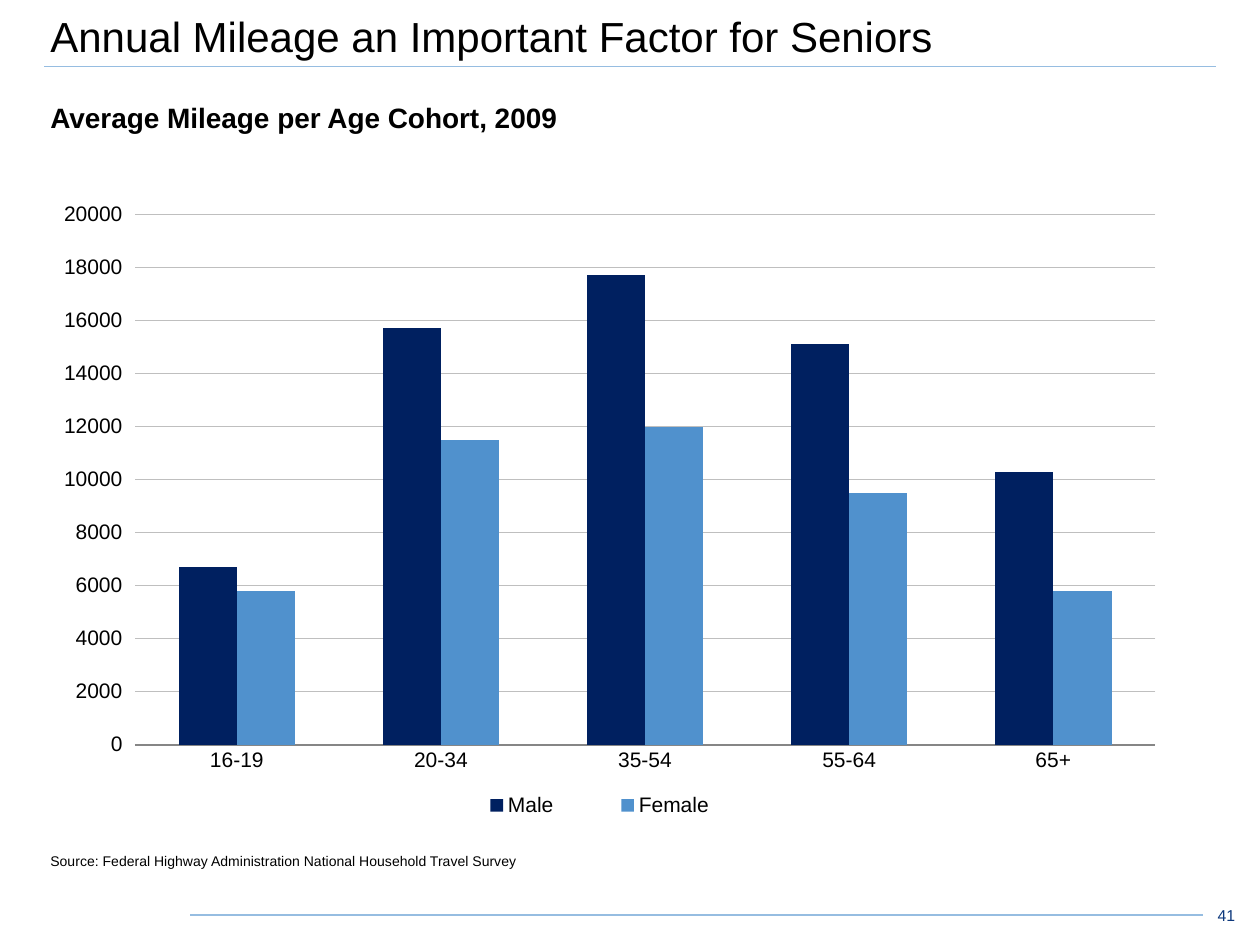
from dataclasses import dataclass

from lxml.etree import SubElement
from pptx import Presentation
from pptx.chart.data import CategoryChartData
from pptx.dml.color import RGBColor
from pptx.enum.chart import XL_CHART_TYPE, XL_LEGEND_POSITION, XL_TICK_MARK
from pptx.enum.shapes import MSO_CONNECTOR
from pptx.enum.text import MSO_ANCHOR, PP_ALIGN
from pptx.oxml.ns import qn
from pptx.util import Inches, Pt


@dataclass(frozen=True)
class Theme:
    font: str = "Arial"
    text: str = "000000"
    number: str = "0D387C"
    rule: str = "96BDE1"
    grid: str = "BFBFBF"
    axis: str = "868686"
    title_size: int = 24
    heading_size: int = 16
    chart_size: int = 12
    number_size: int = 9
    source_size: int = 8


THEME = Theme()

# Content: text boxes as (text, area, inset, anchor, alignment, size, colour, bold)
TEXTS = [
    ("Source: Federal Highway Administration National Household Travel Survey",
     (0.35, 6.24, 9.3, 0.71), 0.05, MSO_ANCHOR.BOTTOM, PP_ALIGN.LEFT,
     THEME.source_size, THEME.text, False),
    ("Annual Mileage an Important Factor for Seniors",
     (0.35, 0, 9.3, 0.53), 0.05, MSO_ANCHOR.BOTTOM, PP_ALIGN.LEFT,
     THEME.title_size, THEME.text, False),
    ("Average Mileage per Age Cohort, 2009",
     (0.35, 0.75, 9.3, 0.5), 0.05, MSO_ANCHOR.TOP, PP_ALIGN.LEFT,
     THEME.heading_size, THEME.text, True),
    ("41", (9.55, 7.1, 0.35, 0.32), 0.1, MSO_ANCHOR.MIDDLE, PP_ALIGN.RIGHT,
     THEME.number_size, THEME.number, False),
]
# Rules as (left, right, height on page, width in points)
RULES = [(0.35, 9.65, 0.53, 0.5), (1.51, 9.55, 7.26, 1)]

AGES = ["16-19", "20-34", "35-54", "55-64", "65+"]
MILEAGE = [
    ("Male", "002060", [6700, 15700, 17700, 15100, 10300]),
    ("Female", "5091CD", [5800, 11500, 12000, 9500, 5800]),
]
CHART_AREA = (0.35, 1.5, 9, 5.07)
# Shares of the chart area: x, y, width, height
PLOT_LAYOUT = (0.08, 0.04, 0.9, 0.83)
LEGEND_LAYOUT = (0.34, 0.93, 0.3, 0.07)


def style_font(font, size, color, bold=False):
    font.name = THEME.font
    font.size = Pt(size)
    font.bold = bold
    font.color.rgb = RGBColor.from_string(color)


def style_line(line, color, width):
    line.color.rgb = RGBColor.from_string(color)
    line.width = Pt(width)


def add_rule(page, left, right, top, width):
    rule = page.shapes.add_connector(
        MSO_CONNECTOR.STRAIGHT, Inches(left), Inches(top), Inches(right), Inches(top))
    style_line(rule.line, THEME.rule, width)
    SubElement(rule._element.spPr, qn("a:effectLst"))


def add_text(page, text, area, inset, anchor, alignment, size, color, bold):
    box = page.shapes.add_textbox(*map(Inches, area))
    frame = box.text_frame
    frame.word_wrap = True
    frame.vertical_anchor = anchor
    frame.margin_left = frame.margin_right = Inches(inset)
    frame.margin_top = frame.margin_bottom = Inches(0.05)
    paragraph = frame.paragraphs[0]
    paragraph.text = text
    paragraph.alignment = alignment
    style_font(paragraph.font, size, color, bold)


def set_layout(element, shares, inner=False):
    """Place a plot area or legend by shares of the chart area."""
    layout = element.find(qn("c:layout"))
    if layout is None:
        layout = element.makeelement(qn("c:layout"), {})
        element.insert(1 if element.tag == qn("c:legend") else 0, layout)
    manual = SubElement(layout, qn("c:manualLayout"))
    if inner:
        SubElement(manual, qn("c:layoutTarget"), val="inner")
    for name in ("xMode", "yMode"):
        SubElement(manual, qn(f"c:{name}"), val="edge")
    for name, share in zip("xywh", shares):
        SubElement(manual, qn(f"c:{name}"), val=str(share))


def add_mileage_chart(page):
    data = CategoryChartData()
    data.categories = AGES
    for name, _, values in MILEAGE:
        data.add_series(name, values)
    chart = page.shapes.add_chart(
        XL_CHART_TYPE.COLUMN_CLUSTERED, *map(Inches, CHART_AREA), data).chart
    chart.has_title = False
    style_font(chart.font, THEME.chart_size, THEME.text)

    # Columns
    plot = chart.plots[0]
    plot.gap_width = 150
    plot.overlap = 0
    plot.vary_by_categories = False
    for series, (_, color, _) in zip(plot.series, MILEAGE):
        series.format.fill.solid()
        series.format.fill.fore_color.rgb = RGBColor.from_string(color)

    # Axes
    ages, miles = chart.category_axis, chart.value_axis
    ages.major_tick_mark = XL_TICK_MARK.NONE
    style_line(ages.format.line, THEME.axis, 1)
    miles.minimum_scale, miles.maximum_scale, miles.major_unit = 0, 20000, 2000
    miles.major_tick_mark = XL_TICK_MARK.OUTSIDE
    miles.format.line.fill.background()
    style_line(miles.major_gridlines.format.line, THEME.grid, 0.75)

    # Legend and plot position
    chart.has_legend = True
    chart.legend.position = XL_LEGEND_POSITION.BOTTOM
    chart.legend.include_in_layout = False
    set_layout(chart.legend._element, LEGEND_LAYOUT)
    set_layout(chart._chartSpace.chart.plotArea, PLOT_LAYOUT, inner=True)


def main():
    deck = Presentation()
    deck.slide_width, deck.slide_height = Inches(10), Inches(7.5)
    page = deck.slides.add_slide(deck.slide_layouts[6])
    for rule in RULES:
        add_rule(page, *rule)
    for entry in TEXTS:
        add_text(page, *entry)
    add_mileage_chart(page)
    deck.save("out.pptx")


if __name__ == "__main__":
    main()
